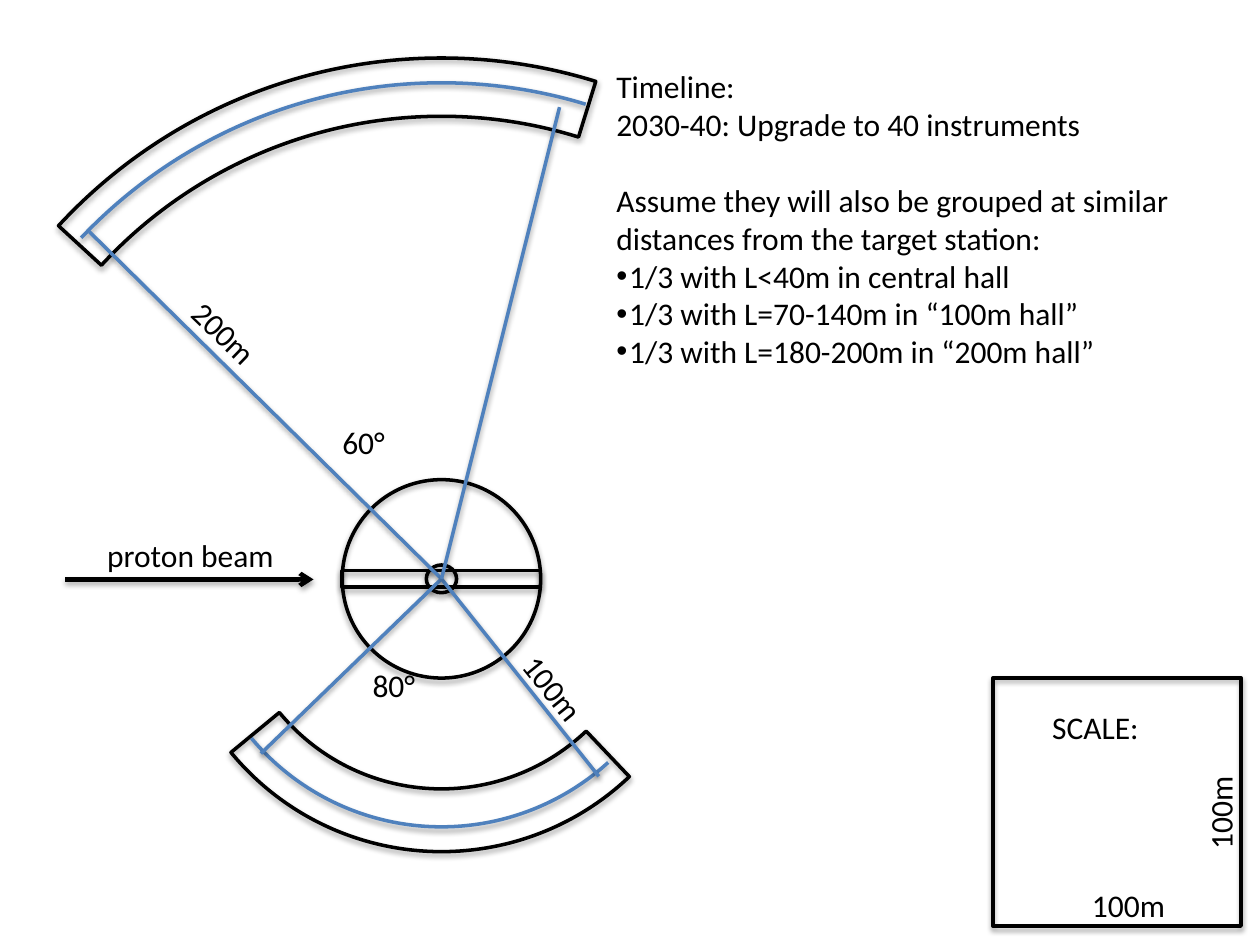
from lxml import etree
from pptx import Presentation
from pptx.dml.color import RGBColor
from pptx.enum.shapes import MSO_CONNECTOR as CONN, MSO_SHAPE as SHAPE
from pptx.enum.text import MSO_ANCHOR, MSO_AUTO_SIZE, PP_ALIGN as ALIGN
from pptx.oxml import parse_xml
from pptx.oxml.ns import nsdecls, qn
from pptx.util import Cm, Pt

BLACK, BLUE = "000000", "4F81BD"


def style_line(sp, colour, width=2):
    """Outline plus the soft shadow below it."""
    sp.line.color.rgb = RGBColor.from_string(colour)
    sp.line.width = Pt(width)
    sp._element.spPr.append(parse_xml(
        f'<a:effectLst {nsdecls("a")}>'
        '<a:outerShdw blurRad="40000" dist="22000" dir="5400000" rotWithShape="0">'
        '<a:srgbClr val="000000"><a:alpha val="36000"/></a:srgbClr>'
        '</a:outerShdw></a:effectLst>'))


def style_text(p, align):
    p.alignment = align
    for r in p.runs:
        r.font.name = "Calibri"
        r.font.size = Pt(18)
        r.font.color.rgb = RGBColor.from_string(BLACK)


prs = Presentation()
prs.slide_width, prs.slide_height = Cm(25.4), Cm(19.05)
s = prs.slides.add_slide(prs.slide_layouts[1])
title, body = s.placeholders
title._element.getparent().remove(title._element)

# Target station, halls and scale square; 5 cm stand for 100 m
cx, cy = 8.9, 11.67
shapes = [  # kind, centre, size, colour, start and end angle, band thickness
    (SHAPE.RECTANGLE, 22.52, 16.17, 5, 5, BLACK, [], []),
    (SHAPE.OVAL, cx, cy, 4, 4, BLACK, [], []),
    (SHAPE.OVAL, cx, cy, 0.61, 0.56, BLACK, [], []),
    (SHAPE.RECTANGLE, cx, cy, 4, 0.33, BLACK, [], []),
    (SHAPE.BLOCK_ARC, cx, cy, 21, 21, BLACK, [222.68, 287.24], [0.056]),
    (SHAPE.BLOCK_ARC, cx, cy, 11, 11, BLACK, [46.47, 140.48], [0.115]),
    (SHAPE.ARC, cx, cy, 20, 20, BLUE, [223.43, 286.91], []),
    (SHAPE.ARC, cx, cy, 10, 10, BLUE, [47.76, 140.02], []),
]
for kind, x, y, w, h, colour, angles, band in shapes:
    sp = s.shapes.add_shape(kind, Cm(x - w / 2), Cm(y - h / 2), Cm(w), Cm(h))
    # One degree is 0.6 in adjustment units
    for i, value in enumerate([a * 0.6 for a in angles] + band):
        sp.adjustments[i] = value
    sp.fill.background()
    style_line(sp, colour)

# Sector edges, from the halls to the target
for x, y in [(1.8, 4.67), (5.26, 15.19), (12.07, 15.65), (11.28, 2.16)]:
    edge = s.shapes.add_connector(CONN.STRAIGHT, Cm(x), Cm(y), Cm(cx), Cm(cy))
    style_line(edge, BLUE)

# Proton beam
beam = s.shapes.add_connector(CONN.STRAIGHT, Cm(1.32), Cm(11.68), Cm(6.32), Cm(11.68))
style_line(beam, BLACK, 2.5)
etree.SubElement(beam.line._get_or_add_ln(), qn("a:tailEnd"), type="arrow")

# Labels: text, centre, width, rotation, alignment
labels = [
    ("100m", 22.75, 18.24, 3.02, 0, ALIGN.CENTER),
    ("100m", 24.6, 16.38, 3.02, 270, ALIGN.CENTER),
    ("SCALE:", 22.47, 14.66, 3.02, 0, ALIGN.LEFT),
    ("60°", 7.33, 8.92, 1.7, 0, ALIGN.CENTER),
    ("80°", 7.94, 13.82, 1.7, 0, ALIGN.CENTER),
    ("200m", 4.52, 6.71, 2.03, 44.1, ALIGN.CENTER),
    ("100m", 11.15, 13.87, 2.03, 51.2, ALIGN.CENTER),
    ("proton beam", 3.84, 11.2, 4.57, 0, ALIGN.CENTER),
]
for text, x, y, w, angle, align in labels:
    sp = s.shapes.add_textbox(Cm(x - w / 2), Cm(y - 0.51), Cm(w), Cm(1.02))
    sp.rotation = angle
    tf = sp.text_frame
    tf.word_wrap = True
    tf.text = text
    style_text(tf.paragraphs[0], align)

# Timeline: text, bulleted, space before in points
timeline = [
    ("Timeline:", False, 0),
    ("2030-40: Upgrade to 40 instruments", False, 0),
    ("Assume they will also be grouped at similar distances from the target station:", False, 22),
    ("1/3 with L<40m in central hall", True, 0),
    ("1/3 with L=70-140m in “100m hall”", True, 0),
    ("1/3 with L=180-200m in “200m hall”", True, 0),
]
body.left, body.top, body.width, body.height = Cm(12.17), Cm(1.22), Cm(13.23), Cm(6.4)
tf = body.text_frame
tf.auto_size = MSO_AUTO_SIZE.NONE
tf.vertical_anchor = MSO_ANCHOR.TOP
tf.text = "\n".join(text for text, _, _ in timeline)
for p, (_, bulleted, gap) in zip(tf.paragraphs, timeline):
    style_text(p, ALIGN.LEFT)
    p.space_before = Pt(gap)
    pPr = p._p.get_or_add_pPr()
    indent = Cm(0.26) if bulleted else 0
    pPr.set("marL", str(indent))
    pPr.set("indent", str(-indent))
    if bulleted:
        etree.SubElement(pPr, qn("a:buFont"), typeface="Arial")
        etree.SubElement(pPr, qn("a:buChar"), char="•")
    else:
        etree.SubElement(pPr, qn("a:buNone"))

prs.save("out.pptx")
